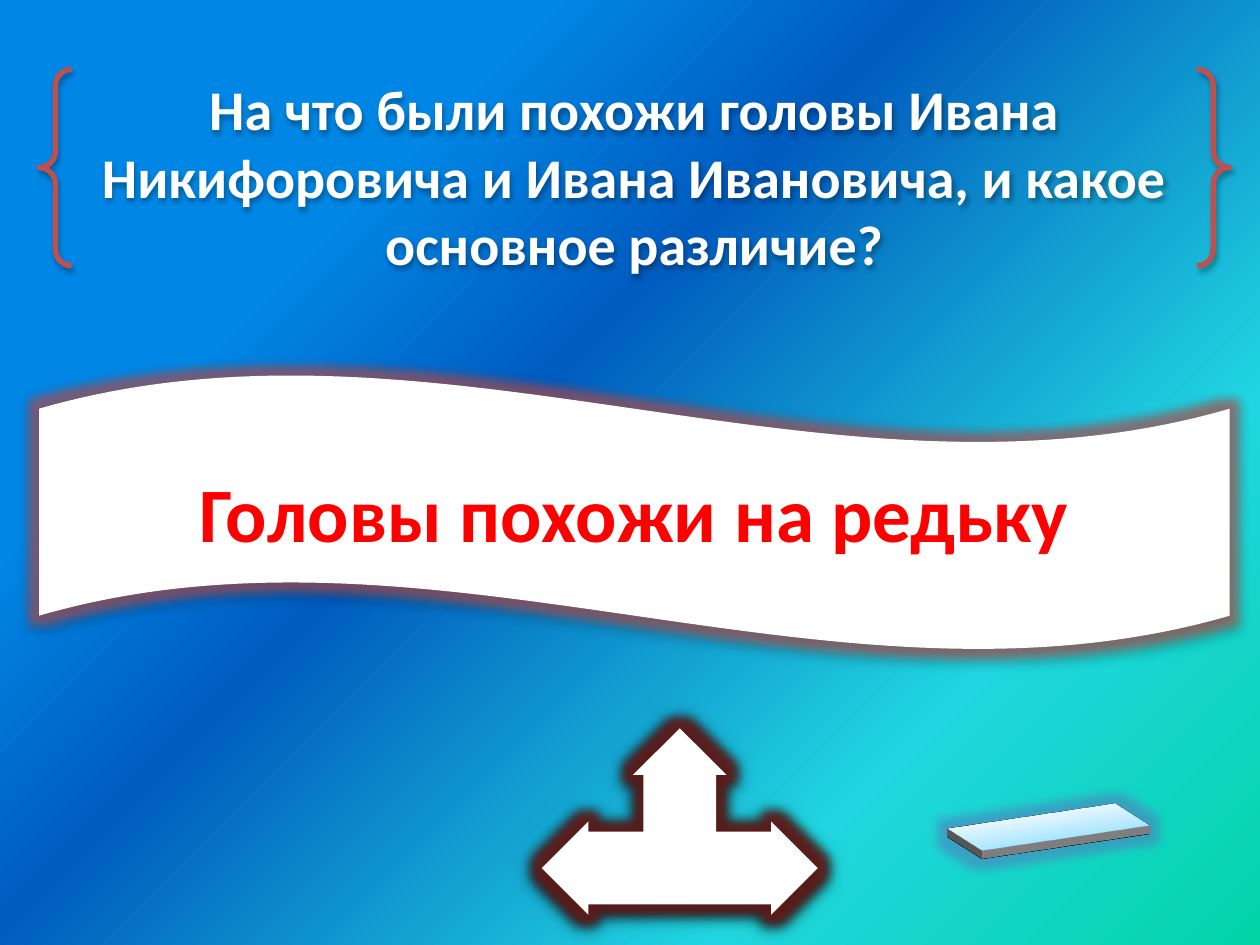
import pptx
import pptx.util
import pptx.dml.color
import pptx.enum.shapes
import pptx.enum.text
import pptx.oxml
import pptx.oxml.ns

Inches = pptx.util.Inches
Pt = pptx.util.Pt
RGB = pptx.dml.color.RGBColor.from_string
SHAPES = pptx.enum.shapes.MSO_SHAPE

THEME = {
    "font": "Calibri", "white": "FFFFFF", "answer": "FF0000",
    "brace": "C0504D", "glow": "C0504D", "arrow_glow": "621D1B",
    "plate_glow": "4F81BD", "shadow": "000000",
    "question_size": 32, "answer_size": 44,
    "background": [(0, "03D4A8"), (25, "21D6E0"), (58, "005CBF"), (75, "0087E6")],
    "plate": [(0, "A7E6FF"), (35, "C1EDFF"), (100, "E7F8FF")],
}

# Shadow: opacity %, blur pt, distance pt, angle. Glow: colour, radius pt, opacity %.
ITEMS = [
    {"kind": SHAPES.DOUBLE_BRACE, "at": (0.31, 0.55, 9.45, 1.56),
     "line": ("brace", 3), "shadow": (35, 3.1, 1.8, 90), "text_shadow": (43, 4, 3, 45),
     "text": "На что были похожи головы Ивана Никифоровича и Ивана Ивановича, и какое основное различие?",
     "size": "question_size", "color": "white"},
    {"kind": SHAPES.WAVE, "at": (0.31, 2.97, 9.45, 2.19), "fill": "white",
     "shadow": (32, 3.5, 2.2, 90), "glow": ("glow", 11, 60),
     "text": "Головы похожи на редьку", "size": "answer_size", "color": "answer"},
    {"kind": SHAPES.LEFT_RIGHT_UP_ARROW, "at": (4.3, 5.78, 2.19, 1.48),
     "adjust": (0.39, 0.25, 0.25), "fill": "white",
     "shadow": (100, 8.5, 1, 90), "glow": ("arrow_glow", 11, 90)},
    {"kind": SHAPES.ACTION_BUTTON_RETURN, "at": (7.58, 6.25, 1.48, 0.63),
     "gradient": "plate", "line": ("white", 2.75), "shadow": (43, 25, 0, 45),
     "glow": ("plate_glow", 11, 60), "camera": "isometricOffAxis1Top", "depth": 5},
]


def drawing_xml(tag, inner):
    return pptx.oxml.parse_xml(f'<a:{tag} {pptx.oxml.ns.nsdecls("a")}>{inner}</a:{tag}>')


def color_xml(color, opacity=100):
    return f'<a:srgbClr val="{color}"><a:alpha val="{opacity * 1000}"/></a:srgbClr>'


def gradient_xml(stops, direction):
    marks = "".join(f'<a:gs pos="{pos * 1000}">{color_xml(color)}</a:gs>' for pos, color in stops)
    return drawing_xml("gradFill", f"<a:gsLst>{marks}</a:gsLst>{direction}")


def effects_xml(shadow, glow=None):
    inner = ""
    if glow:
        color, radius, opacity = glow
        inner = f'<a:glow rad="{Pt(radius)}">{color_xml(THEME[color], opacity)}</a:glow>'
    opacity, blur, distance, angle = shadow
    inner += (f'<a:outerShdw blurRad="{Pt(blur)}" dist="{Pt(distance)}" dir="{angle * 60000}" '
              f'rotWithShape="0">{color_xml(THEME["shadow"], opacity)}</a:outerShdw>')
    return drawing_xml("effectLst", inner)


def paint_background(page):
    page.background.fill.solid()
    solid = page.background._cSld.bg.bgPr[0]
    direction = '<a:path path="circle"><a:fillToRect l="100000" t="100000"/></a:path>'
    solid.getparent().replace(solid, gradient_xml(THEME["background"], direction))


def paint_shape(shape, item):
    if "fill" in item or "gradient" in item:
        shape.fill.solid()
        shape.fill.fore_color.rgb = RGB(THEME["white"])
    else:
        shape.fill.background()
    if "gradient" in item:
        solid = shape._element.spPr.find(pptx.oxml.ns.qn("a:solidFill"))
        solid.getparent().replace(
            solid, gradient_xml(THEME[item["gradient"]], '<a:lin ang="16200000"/>'))
    if "line" in item:
        color, width = item["line"]
        shape.line.color.rgb = RGB(THEME[color])
        shape.line.width = Pt(width)
    else:
        shape.line.fill.background()
    properties = shape._element.spPr
    properties.append(effects_xml(item["shadow"], item.get("glow")))
    if "camera" in item:
        properties.append(drawing_xml(
            "scene3d", f'<a:camera prst="{item["camera"]}"/><a:lightRig rig="threePt" dir="t"/>'))
        solid_body = drawing_xml("sp3d", "")
        solid_body.set("extrusionH", str(Pt(item["depth"])))
        properties.append(solid_body)


def write_text(shape, item):
    frame = shape.text_frame
    frame.word_wrap = True
    frame.vertical_anchor = pptx.enum.text.MSO_ANCHOR.MIDDLE
    para = frame.paragraphs[0]
    para.alignment = pptx.enum.text.PP_ALIGN.CENTER
    span = para.add_run()
    span.text = item["text"]
    formats = {"name": THEME["font"], "size": Pt(THEME[item["size"]]), "bold": True}
    for name, value in formats.items():
        setattr(span.font, name, value)
    span.font.color.rgb = RGB(THEME[item["color"]])
    if "text_shadow" in item:
        span._r.get_or_add_rPr().insert(1, effects_xml(item["text_shadow"]))


def main():
    deck = pptx.Presentation()
    deck.slide_width, deck.slide_height = Inches(10), Inches(7.5)
    page = deck.slides.add_slide(deck.slide_layouts[6])
    paint_background(page)
    for item in ITEMS:
        shape = page.shapes.add_shape(item["kind"], *map(Inches, item["at"]))
        for index, value in enumerate(item.get("adjust", ())):
            shape.adjustments[index] = value
        paint_shape(shape, item)
        if "text" in item:
            write_text(shape, item)
    deck.save("out.pptx")


if __name__ == "__main__":
    main()
